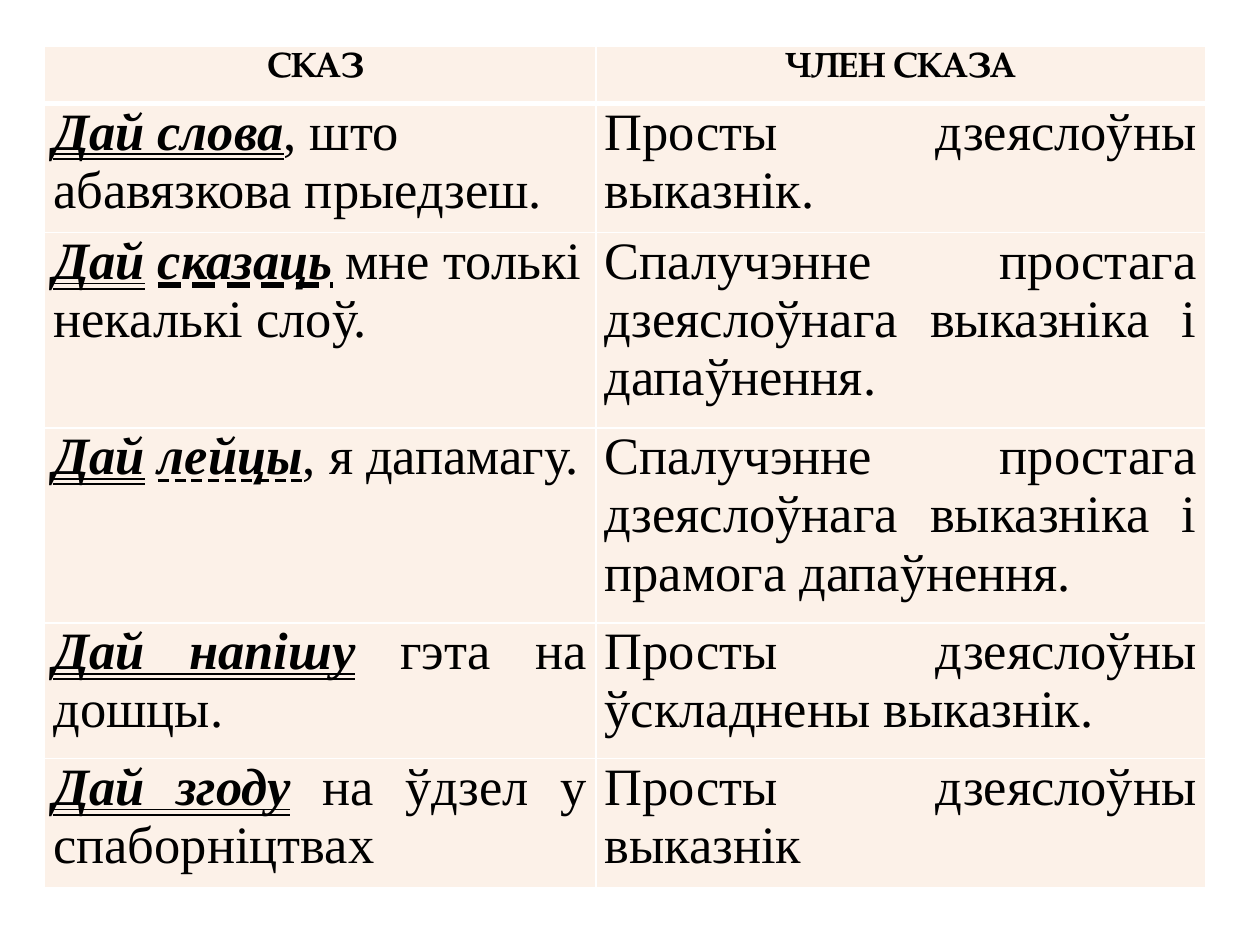
from dataclasses import dataclass

import pptx
import pptx.dml.color
import pptx.enum.text
import pptx.oxml
import pptx.oxml.ns
import pptx.presentation
import pptx.table
import pptx.util

Pt = pptx.util.Pt
Align = pptx.enum.text.PP_ALIGN
Underline = pptx.enum.text.MSO_TEXT_UNDERLINE_TYPE

CELL_FILL = "FCF1E8"
BORDER = "FFFFFF"
TEXT = "000000"
HEADER = {"name": "TeX Gyre Pagella", "size": Pt(20), "bold": True}
BODY = {"name": "Times New Roman", "size": Pt(30), "bold": False}
EMPHASIS = {**BODY, "bold": True, "italic": True}
PREDICATE = {**EMPHASIS, "underline": Underline.DOUBLE_LINE}
OBJECT = {**EMPHASIS, "underline": Underline.DASH_LINE}
HEAVY_OBJECT = {**EMPHASIS, "underline": Underline.DASH_HEAVY_LINE}
BODY_MARGINS = {
    "margin_left": Pt(5),
    "margin_right": Pt(5),
    "margin_top": Pt(0),
    "margin_bottom": Pt(0),
}

LEFT, TOP = 25.5, 26.5
COLUMN_WIDTHS = (315, 348.5)


@dataclass
class Run:
    text: str
    font: dict


@dataclass
class Row:
    height: float
    example: list[Run]
    member: str
    alignment: Align = Align.JUSTIFY


ROWS = [
    Row(
        74,
        [Run("Дай слова", PREDICATE), Run(", што абавязкова прыедзеш.", BODY)],
        "Просты дзеяслоўны выказнік.",
        Align.LEFT,
    ),
    Row(
        111.5,
        [
            Run("Дай", PREDICATE),
            Run(" ", EMPHASIS),
            Run("сказаць", HEAVY_OBJECT),
            Run(" мне толькі некалькі слоў.", BODY),
        ],
        "Спалучэнне простага дзеяслоўнага выказніка і дапаўнення.",
        Align.LEFT,
    ),
    Row(
        111.5,
        [
            Run("Дай", PREDICATE),
            Run(" ", EMPHASIS),
            Run("лейцы", OBJECT),
            Run(", я дапамагу.", BODY),
        ],
        "Спалучэнне простага дзеяслоўнага выказніка і прамога дапаўнення.",
    ),
    Row(
        77.5,
        [Run("Дай напішу", PREDICATE), Run(" гэта на дошцы.", BODY)],
        "Просты дзеяслоўны ўскладнены выказнік.",
    ),
    Row(
        74,
        [Run("Дай згоду", PREDICATE), Run(" на ўдзел у спаборніцтвах", BODY)],
        "Просты дзеяслоўны выказнік",
    ),
]
HEADER_HEIGHT = 32.5
HEADINGS = ("СКАЗ ", "ЧЛЕН СКАЗА")


def color(value: str) -> pptx.dml.color.RGBColor:
    return pptx.dml.color.RGBColor.from_string(value)


def apply_format(target: object, values: dict) -> None:
    for name, value in values.items():
        setattr(target, name, value)


def add_borders(cell: pptx.table._Cell, widths: dict[str, float]) -> None:
    properties = cell._tc.get_or_add_tcPr()
    namespace = pptx.oxml.ns.nsdecls("a")
    for side in "LRTB":
        properties.append(
            pptx.oxml.parse_xml(
                f'<a:ln{side} {namespace} w="{Pt(widths.get(side, 1))}">'
                f'<a:solidFill><a:srgbClr val="{BORDER}"/></a:solidFill>'
                f"</a:ln{side}>"
            )
        )


def fill_cell(
    cell: pptx.table._Cell,
    runs: list[Run],
    alignment: Align,
    margins: dict,
    borders: dict[str, float],
) -> None:
    add_borders(cell, borders)
    cell.fill.solid()
    cell.fill.fore_color.rgb = color(CELL_FILL)
    apply_format(cell, margins)
    paragraph = cell.text_frame.paragraphs[0]
    paragraph.alignment = alignment
    for item in runs:
        run = paragraph.add_run()
        run.text = item.text
        apply_format(run.font, item.font)
        run.font.color.rgb = color(TEXT)


def add_sentence_table(slide: pptx.slide.Slide) -> None:
    heights = [HEADER_HEIGHT] + [row.height for row in ROWS]
    table = slide.shapes.add_table(
        len(heights),
        len(COLUMN_WIDTHS),
        Pt(LEFT),
        Pt(TOP),
        Pt(sum(COLUMN_WIDTHS)),
        Pt(sum(heights)),
    ).table
    for column, width in zip(table.columns, COLUMN_WIDTHS):
        column.width = Pt(width)
    for table_row, height in zip(table.rows, heights):
        table_row.height = Pt(height)
    for index, heading in enumerate(HEADINGS):
        fill_cell(table.cell(0, index), [Run(heading, HEADER)], Align.CENTER, {}, {"B": 3})
    for index, row in enumerate(ROWS, start=1):
        borders = {"T": 3} if index == 1 else {}
        fill_cell(table.cell(index, 0), row.example, row.alignment, BODY_MARGINS, borders)
        member = [Run(row.member, BODY)]
        fill_cell(table.cell(index, 1), member, Align.JUSTIFY, BODY_MARGINS, borders)


def main() -> None:
    presentation = pptx.Presentation()
    presentation.slide_width = Pt(720)
    presentation.slide_height = Pt(540)
    slide = presentation.slides.add_slide(presentation.slide_layouts[6])
    add_sentence_table(slide)
    presentation.save("out.pptx")


if __name__ == "__main__":
    main()
